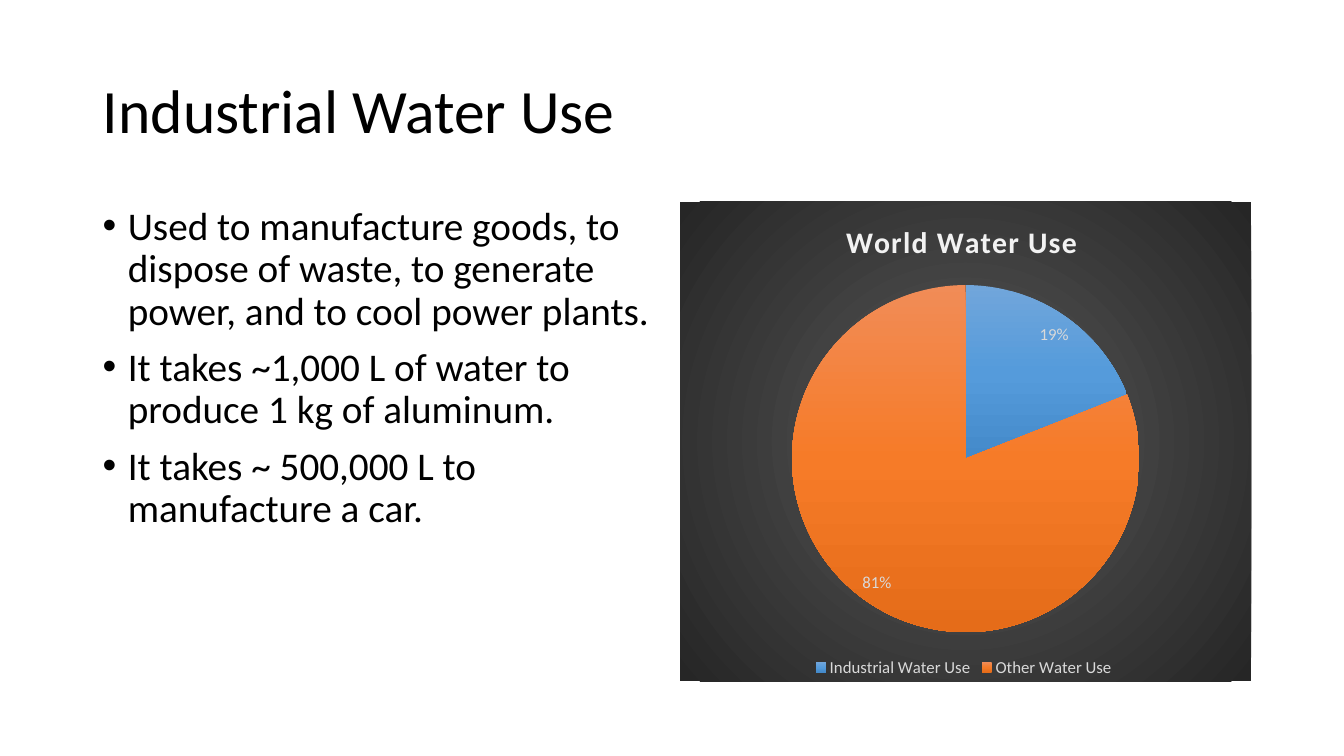
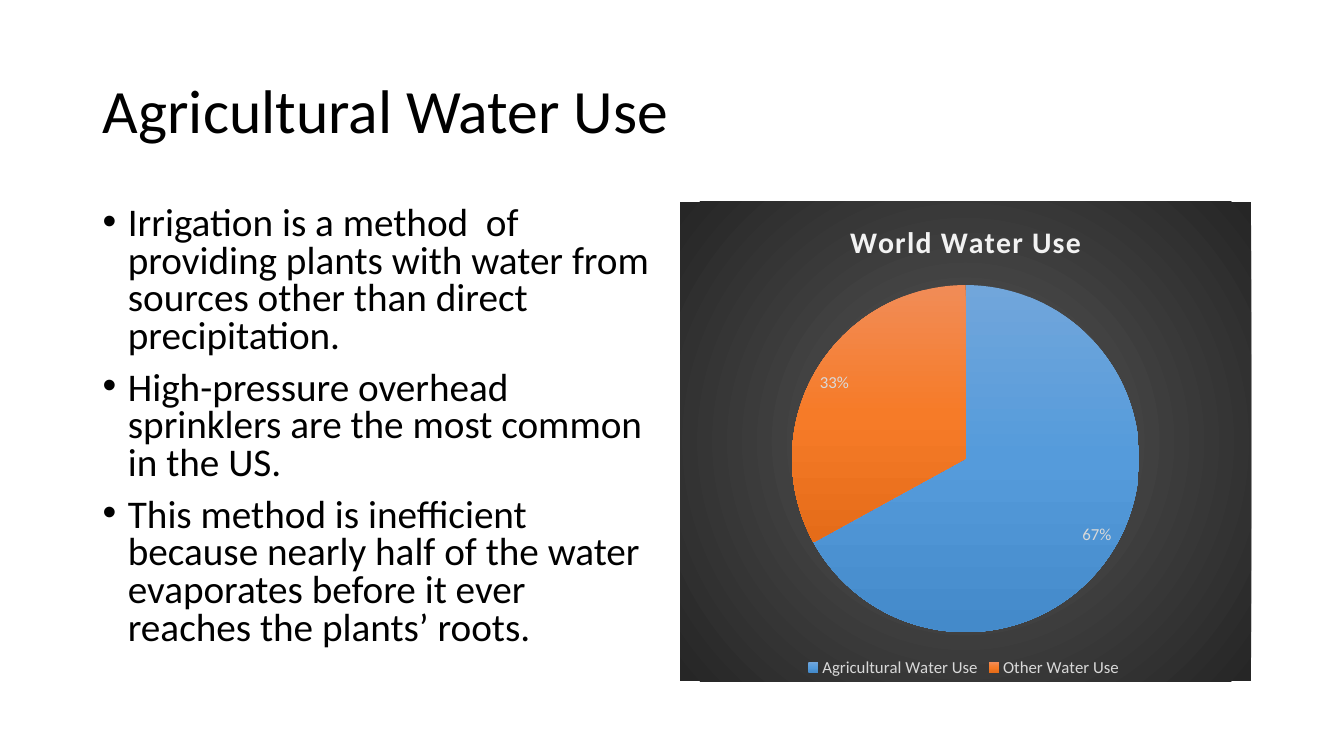
from dataclasses import dataclass

from lxml import etree
from pptx import Presentation
from pptx import util as u
from pptx.chart import data as chart_data
from pptx.dml import color
from pptx.enum import chart as ch, text
from pptx.oxml import ns


@dataclass(frozen=True)
class Theme:
    font: str = "Calibri"
    ink: str = "000000"
    chart_title: str = "F2F2F2"
    chart_text: str = "D9D9D9"
    backdrop: tuple = ((0, "595959"), (100, "262626"))
    slices: tuple = (
        ((0, "71A6DB"), (50, "559BDB"), (100, "448ACA")),
        ((0, "F18C57"), (50, "F67B28"), (100, "E56C19")),
    )
    title_size: float = 44
    body_size: float = 28
    chart_title_size: float = 21.3
    chart_size: float = 12
    title_leading: float = 0.9
    paragraph_gap: float = 10
    indent: float = 0.25


@dataclass(frozen=True)
class Box:
    left: float
    top: float
    width: float
    height: float

    def emu(self):
        return [u.Inches(v) for v in (self.left, self.top, self.width, self.height)]


THEME = Theme()
WIDTH, HEIGHT = 13.33, 7.5
MARGIN, GUTTER = 0.92, 0.16
CONTENT = WIDTH - 2 * MARGIN
COLUMN = (CONTENT - GUTTER) / 2
TITLE_BOX = Box(MARGIN, 0.4, CONTENT, 1.45)
BODY_BOX = Box(MARGIN, 2, COLUMN, 4.76)
CHART_BOX = Box(MARGIN + COLUMN + GUTTER, 2, COLUMN, 4.76)

SLIDES = [
    dict(
        title="Industrial Water Use",
        bullets=[
            "Used to manufacture goods, to dispose of waste, to generate power, and to cool power plants.",
            "It takes ~1,000 L of water to produce 1 kg of aluminum.",
            "It takes ~ 500,000 L to manufacture a car.",
        ],
        leading=0.9,
        chart_title="World Water Use ",
        shares={"Industrial Water Use": 0.19, "Other Water Use ": 0.81},
    ),
    dict(
        title="Agricultural Water Use",
        bullets=[
            "Irrigation is a method  of providing plants with water from sources other than direct precipitation.",
            "High-pressure overhead sprinklers are the most common in the US.",
            "This method is inefficient because nearly half of the water evaporates before it ever reaches the plants’ roots.",
        ],
        leading=0.8,
        chart_title="World Water Use",
        shares={"Agricultural Water Use": 0.67, "Other Water Use ": 0.33},
    ),
]


def style(font, size, rgb, bold=False):
    font.name = THEME.font
    font.size = u.Pt(size)
    font.bold = bold
    font.color.rgb = color.RGBColor.from_string(rgb)


def add(parent, tag, **attributes):
    child = etree.SubElement(parent, ns.qn(tag))
    for name, value in attributes.items():
        child.set(name, str(value))
    return child


def paint_gradient(properties, stops, radial=False):
    for child in list(properties):
        properties.remove(child)
    gradient = add(properties, "a:gradFill", rotWithShape=1)
    stop_list = add(gradient, "a:gsLst")
    for position, rgb in stops:
        stop = add(stop_list, "a:gs", pos=position * 1000)
        add(stop, "a:srgbClr", val=rgb)
    if radial:
        shading = add(gradient, "a:path", path="circle")
        add(shading, "a:fillToRect", l=50000, t=50000, r=50000, b=50000)
    else:
        add(gradient, "a:lin", ang=90 * 60000, scaled=0)
    add(add(properties, "a:ln"), "a:noFill")


def place_title(slide, box, wording):
    title = slide.shapes.title
    title.left, title.top, title.width, title.height = box.emu()
    frame = title.text_frame
    frame.word_wrap = True
    frame.auto_size = text.MSO_AUTO_SIZE.NONE
    frame.vertical_anchor = text.MSO_ANCHOR.MIDDLE
    paragraph = frame.paragraphs[0]
    paragraph.alignment = text.PP_ALIGN.LEFT
    paragraph.line_spacing = THEME.title_leading
    run = paragraph.add_run()
    run.text = wording
    style(run.font, THEME.title_size, THEME.ink)


def place_bullets(slide, box, bullets, leading):
    body = slide.shapes.add_textbox(*box.emu())
    frame = body.text_frame
    frame.word_wrap = True
    for index, wording in enumerate(bullets):
        paragraph = frame.add_paragraph() if index else frame.paragraphs[0]
        paragraph.alignment = text.PP_ALIGN.LEFT
        paragraph.line_spacing = leading
        paragraph.space_before = u.Pt(THEME.paragraph_gap)
        run = paragraph.add_run()
        run.text = wording
        style(run.font, THEME.body_size, THEME.ink)
    indent = u.Inches(THEME.indent)
    for properties in body.element.iter(ns.qn("a:pPr")):
        properties.set("marL", str(indent))
        properties.set("indent", str(-indent))
        add(properties, "a:buFont", typeface="Arial")
        add(properties, "a:buChar", char="•")


def place_pie(slide, box, heading, shares):
    data = chart_data.CategoryChartData(number_format="0%")
    data.categories = list(shares)
    data.add_series(heading, list(shares.values()))
    pie = slide.shapes.add_chart(ch.XL_CHART_TYPE.PIE, *box.emu(), data).chart
    style(pie.font, THEME.chart_size, THEME.chart_text)

    backdrop = etree.Element(ns.qn("c:spPr"))
    pie.element.find(ns.qn("c:chart")).addnext(backdrop)
    paint_gradient(backdrop, THEME.backdrop, radial=True)

    pie.has_title = True
    run = pie.chart_title.text_frame.paragraphs[0].add_run()
    run.text = heading
    style(run.font, THEME.chart_title_size, THEME.chart_title, bold=True)
    next(pie.chart_title.element.iter(ns.qn("a:rPr"))).set("spc", "100")

    pie.has_legend = True
    pie.legend.position = ch.XL_LEGEND_POSITION.BOTTOM
    pie.legend.include_in_layout = False
    style(pie.legend.font, THEME.chart_size, THEME.chart_text)

    plot = pie.plots[0]
    plot.vary_by_categories = True
    for index, stops in enumerate(THEME.slices):
        look = plot.series[0].points[index].format
        look.fill.background()
        paint_gradient(look.element.find(ns.qn("c:spPr")), stops)

    plot.has_data_labels = True
    labels = plot.data_labels
    labels.show_value = True
    labels.show_percentage = False
    labels.number_format = "0%"
    labels.number_format_is_linked = False
    labels.position = ch.XL_LABEL_POSITION.BEST_FIT
    style(labels.font, THEME.chart_size, THEME.chart_text)


def build_water_use(deck, title, bullets, leading, chart_title, shares):
    slide = deck.slides.add_slide(deck.slide_layouts.get_by_name("Title Only"))
    place_title(slide, TITLE_BOX, title)
    place_bullets(slide, BODY_BOX, bullets, leading)
    place_pie(slide, CHART_BOX, chart_title, shares)


def main():
    deck = Presentation()
    deck.slide_width, deck.slide_height = u.Inches(WIDTH), u.Inches(HEIGHT)
    for content in SLIDES:
        build_water_use(deck, **content)
    deck.save("out.pptx")


if __name__ == "__main__":
    main()
